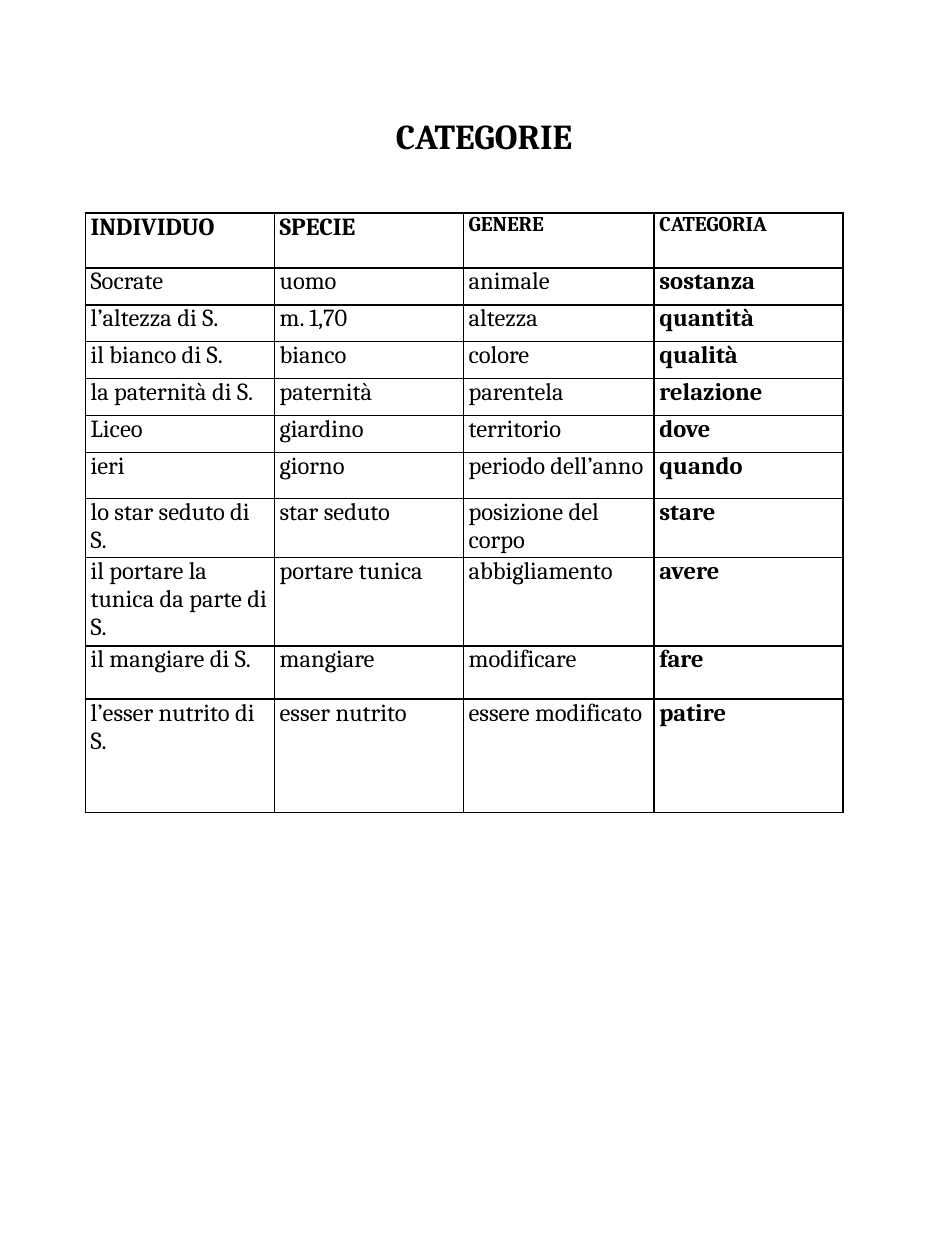
"""Build a one-page table of Aristotle's categories."""
from dataclasses import dataclass

from lxml import etree
from pptx import Presentation
from pptx import util as u
from pptx.dml.color import RGBColor
from pptx.enum import text
from pptx.oxml import ns

COLOURS = {"ink": "000000"}
FONT = "Cambria"
COLUMN_WIDTHS = (108, 108, 109, 108)
HEADINGS = (("INDIVIDUO", 14), ("SPECIE", 14), ("GENERE", 12), ("CATEGORIA", 12))
HEADING_HEIGHT = 31.4


@dataclass(frozen=True)
class Example:
    individual: str
    species: str
    genus: str
    category: str
    height: float = 21.1


EXAMPLES = (
    Example("Socrate", "uomo", "animale", "sostanza"),
    Example("l’altezza di S.", "m. 1,70", "altezza", "quantità"),
    Example("il bianco di S.", "bianco", "colore", "qualità"),
    Example("la paternità di S.", "paternità", "parentela", "relazione"),
    Example("Liceo", "giardino", "territorio", "dove"),
    Example("ieri", "giorno", "periodo dell’anno", "quando", 26.4),
    Example("lo star seduto di S.", "star seduto", "posizione del corpo", "stare", 32.4),
    Example("il portare la tunica da parte di S.", "portare tunica", "abbigliamento", "avere", 48),
    Example("il mangiare di S.", "mangiare", "modificare", "fare", 30.4),
    Example("l’esser nutrito di S.", "esser nutrito", "essere modificato", "patire", 65),
)


def write(paragraph, wording: str, size: float, bold: bool) -> None:
    """Add one formatted run to a paragraph."""
    run = paragraph.add_run()
    run.text = wording
    run.font.name = FONT
    run.font.size = u.Pt(size)
    run.font.bold = bold
    run.font.color.rgb = RGBColor.from_string(COLOURS["ink"])


def draw_borders(cell) -> None:
    """Rule all four sides of a cell."""
    properties = cell._tc.get_or_add_tcPr()
    for side in ("lnL", "lnR", "lnT", "lnB"):
        line = etree.SubElement(properties, ns.qn(f"a:{side}"), w=str(u.Pt(1)))
        fill = etree.SubElement(line, ns.qn("a:solidFill"))
        etree.SubElement(fill, ns.qn("a:srgbClr"), val=COLOURS["ink"])


def fill_cell(cell, wording: str, size: float, bold: bool) -> None:
    """Format a cell and write its wording."""
    cell.margin_left = cell.margin_right = u.Pt(3)
    cell.margin_top = cell.margin_bottom = u.Pt(0)
    cell.vertical_anchor = text.MSO_ANCHOR.TOP
    draw_borders(cell)
    cell.fill.background()
    write(cell.text_frame.paragraphs[0], wording, size, bold)


def draw_title(title) -> None:
    """Place and write the slide title."""
    title.left, title.top = u.Pt(219), u.Pt(62)
    title.width, title.height = u.Pt(137), u.Pt(31.5)
    frame = title.text_frame
    frame.word_wrap = False
    frame.auto_size = text.MSO_AUTO_SIZE.SHAPE_TO_FIT_TEXT
    frame.vertical_anchor = text.MSO_ANCHOR.TOP
    frame.paragraphs[0].alignment = text.PP_ALIGN.LEFT
    write(frame.paragraphs[0], "CATEGORIE", 20, True)


def draw_categories(slide) -> None:
    """Draw the table of headings and examples."""
    heights = (HEADING_HEIGHT, *(example.height for example in EXAMPLES))
    table = slide.shapes.add_table(
        len(heights), len(COLUMN_WIDTHS), u.Pt(48.8), u.Pt(121.7),
        u.Pt(sum(COLUMN_WIDTHS)), u.Pt(sum(heights)),
    ).table
    table.first_row = table.horz_banding = False
    for column, width in zip(table.columns, COLUMN_WIDTHS):
        column.width = u.Pt(width)
    for row, height in zip(table.rows, heights):
        row.height = u.Pt(height)
    for column, (heading, size) in enumerate(HEADINGS):
        fill_cell(table.cell(0, column), heading, size, True)
    for row, example in enumerate(EXAMPLES, start=1):
        wordings = (example.individual, example.species, example.genus, example.category)
        for column, wording in enumerate(wordings):
            fill_cell(table.cell(row, column), wording, 14, column == 3)


def main() -> None:
    """Assemble and save the slide."""
    deck = Presentation()
    deck.slide_width, deck.slide_height = u.Pt(540), u.Pt(720)
    slide = deck.slides.add_slide(deck.slide_layouts[5])
    draw_title(slide.shapes.title)
    draw_categories(slide)
    deck.save("out.pptx")


if __name__ == "__main__":
    main()
